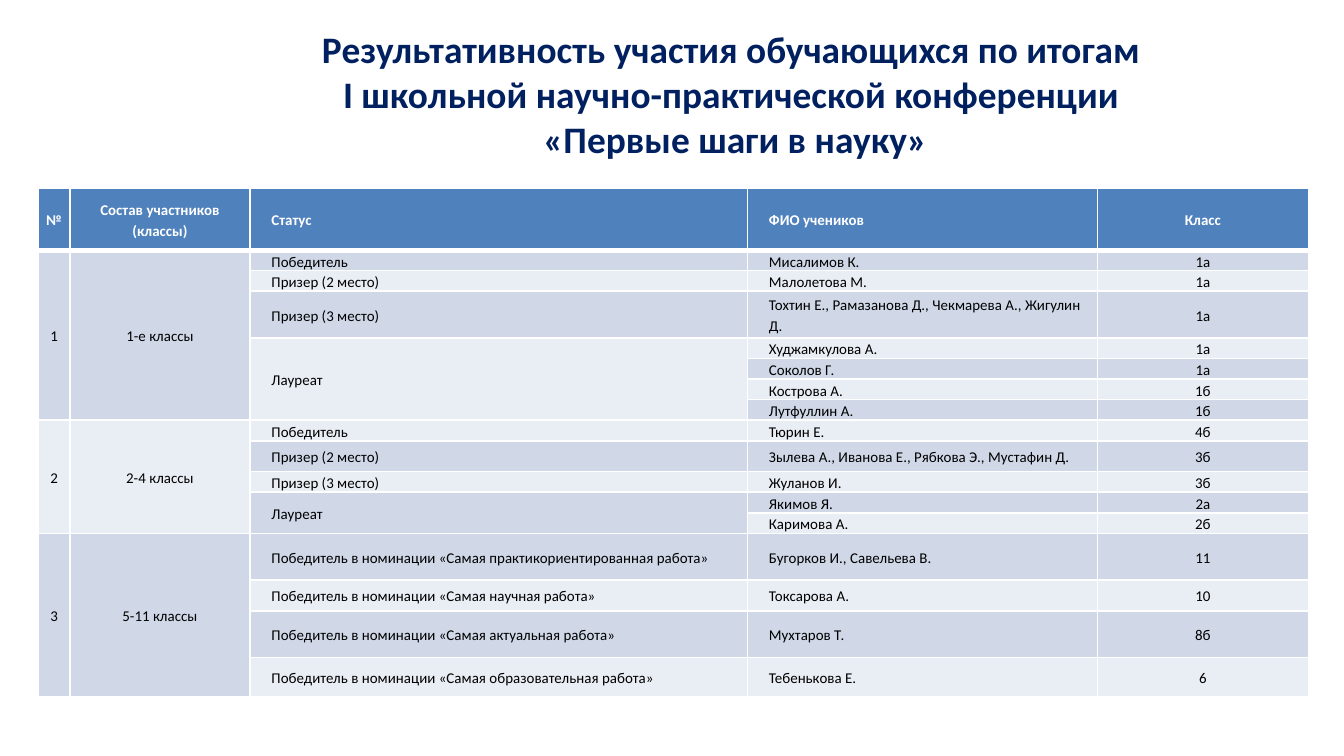
from lxml.etree import SubElement as Sub
from pptx import Presentation
from pptx.dml.color import RGBColor as RGB
from pptx.enum.text import MSO_ANCHOR as Anchor, MSO_AUTO_SIZE as Fit, PP_ALIGN as Align
from pptx.oxml.ns import qn
from pptx.util import Pt

HUES = {"navy": "002060", "head": "4F81BD", "odd": "D0D8E8",
        "even": "E9EDF4", "white": "FFFFFF", "black": "000000"}
TITLE = ["Результативность участия обучающихся по итогам ",
         "I школьной научно-практической конференции ",
         "«Первые шаги в науку»"]
HEAD = ("№", "Состав участников (классы)", "Статус", "ФИО учеников", "Класс")
GROUPS = [
    ("1", "1-е классы", [
        ("Победитель", [("Мисалимов К.", "1а")]),
        ("Призер (2 место)", [("Малолетова М.", "1а")]),
        ("Призер (3 место)", [("Тохтин Е., Рамазанова Д., Чекмарева А., Жигулин Д.", "1а")]),
        ("Лауреат", [("Худжамкулова А.", "1а"), ("Соколов Г.", "1а"),
                     ("Кострова А.", "1б"), ("Лутфуллин А.", "1б")])]),
    ("2", "2-4 классы", [
        ("Победитель", [("Тюрин Е.", "4б")]),
        ("Призер (2 место)", [("Зылева А., Иванова Е., Рябкова Э., Мустафин Д.", "3б")]),
        ("Призер (3 место)", [("Жуланов И.", "3б")]),
        ("Лауреат", [("Якимов Я.", "2а"), ("Каримова А.", "2б")])]),
    ("3", "5-11 классы", [
        ("Победитель в номинации «Самая практикориентированная работа»",
         [("Бугорков И., Савельева В.", "11")]),
        ("Победитель в номинации «Самая научная работа»", [("Токсарова А.", "10")]),
        ("Победитель в номинации «Самая актуальная работа»", [("Мухтаров Т.", "8б")]),
        ("Победитель в номинации «Самая образовательная работа»", [("Тебенькова Е.", "6")])]),
]
COLS = (17, 96.5, 266.5, 187.5, 113)
LOW = 8.8
TALL = {0: 33, 3: 25, 9: 16.5, 13: 25, 14: 16.5, 15: 25, 16: 21}


def flatten(groups):
    rows = [HEAD]
    for num, group, ranks in groups:
        for rank, pupils in ranks:
            for name, form in pupils:
                rows.append((num, group, rank, name, form))
                num = group = rank = None
    return rows


class Deck:
    face = "Calibri"

    def __init__(self, wide, high):
        self.prs = Presentation()
        self.prs.slide_width, self.prs.slide_height = Pt(wide), Pt(high)
        self.slide = self.prs.slides.add_slide(self.prs.slide_layouts[5])

    def style(self, par, size, hue, bold, align):
        par.alignment = align
        for run in par.runs:
            font = run.font
            font.name, font.size, font.bold = self.face, Pt(size), bold
            font.color.rgb = RGB.from_string(HUES[hue])

    def title(self, lines, left, top, wide, high):
        box = self.slide.shapes.title
        box.left, box.top, box.width, box.height = map(Pt, (left, top, wide, high))
        frame = box.text_frame
        frame.text = "\n".join(lines)
        frame.word_wrap, frame.auto_size = True, Fit.SHAPE_TO_FIT_TEXT
        frame.vertical_anchor = Anchor.MIDDLE
        for par in frame.paragraphs:
            self.style(par, 20, "navy", True, Align.CENTER)

    def edge(self, cell, side, width):
        line = Sub(cell._tc.get_or_add_tcPr(), qn(f"a:ln{side}"), w=str(Pt(width)))
        Sub(Sub(line, qn("a:solidFill")), qn("a:srgbClr"), val=HUES["white"])

    def cell(self, cell, text, row, col):
        cell.margin_left = cell.margin_right = Pt(3)
        cell.margin_top = cell.margin_bottom = 0
        cell.vertical_anchor = Anchor.MIDDLE
        for side in "LRTB":
            thick = (row, side) in ((0, "B"), (1, "T"))
            self.edge(cell, side, 3 if thick else 1)
        cell.fill.solid()
        hue = "head" if row == 0 else "odd" if row % 2 else "even"
        cell.fill.fore_color.rgb = RGB.from_string(HUES[hue])
        par = cell.text_frame.paragraphs[0]
        if text is None:
            Sub(par._p, qn("a:endParaRPr"), sz="800")
            return
        par.text = text
        par.line_spacing = 1.15
        left = col in (2, 3)
        if left:
            par._p.get_or_add_pPr().set("marL", str(Pt(8.5)))
        self.style(par, 8, "black" if row else "white", row == 0,
                   Align.LEFT if left else Align.CENTER)

    def table(self, rows, left, top):
        highs = [TALL.get(i, LOW) for i in range(len(rows))]
        grid = self.slide.shapes.add_table(
            len(rows), len(COLS), Pt(left), Pt(top), Pt(sum(COLS)), Pt(sum(highs))).table
        for col, wide in zip(grid.columns, COLS):
            col.width = Pt(wide)
        for row, high in zip(grid.rows, highs):
            row.height = Pt(high)
        for i, row in enumerate(rows):
            for j, text in enumerate(row):
                self.cell(grid.cell(i, j), text, i, j)
        for j in range(len(COLS)):
            heads = [i for i, row in enumerate(rows) if row[j] is not None]
            for top, end in zip(heads, heads[1:] + [len(rows)]):
                if end - top > 1:
                    grid.cell(top, j).merge(grid.cell(end - 1, j))


def main():
    deck = Deck(720, 405)
    deck.title(TITLE, 93.5, 10, 601, 80)
    deck.table(flatten(GROUPS), 20.5, 101)
    deck.prs.save("out.pptx")


if __name__ == "__main__":
    main()
